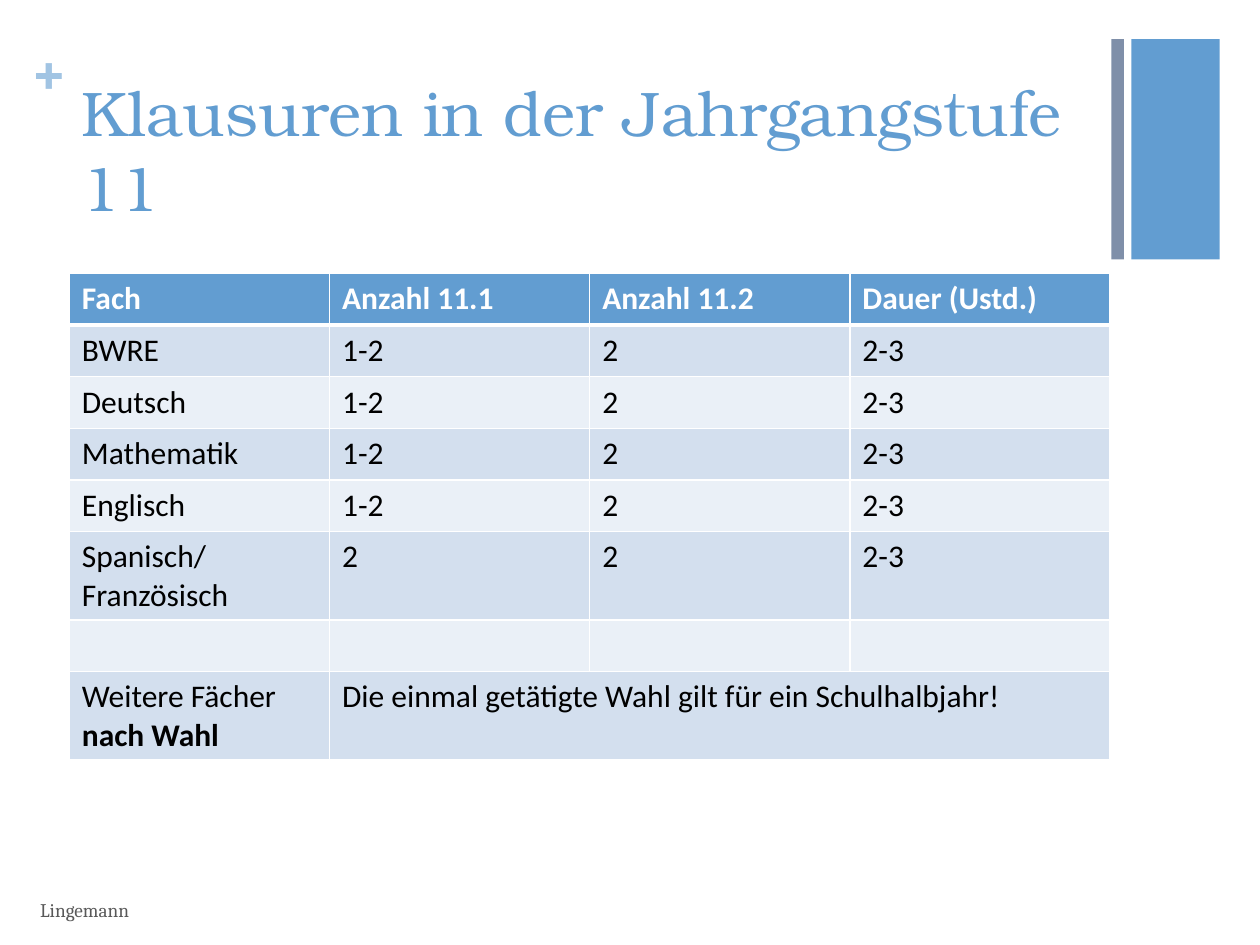
from lxml.etree import SubElement
from pptx import Presentation
from pptx.dml.color import RGBColor
from pptx.enum.shapes import MSO_SHAPE as Shape
from pptx.enum.text import MSO_ANCHOR as Anchor, MSO_AUTO_SIZE as AutoSize, PP_ALIGN as Align
from pptx.oxml.ns import qn
from pptx.util import Inches, Pt

BLUE = RGBColor(0x62, 0x9D, 0xD1)
PALE_BLUE = RGBColor(0xA1, 0xC4, 0xE3)
SLATE = RGBColor(0x7F, 0x8F, 0xA9)
BAND_DARK = RGBColor(0xD3, 0xDF, 0xEE)
BAND_LIGHT = RGBColor(0xEA, 0xF0, 0xF7)
GREY = RGBColor(0x59, 0x59, 0x59)
BLACK = RGBColor(0, 0, 0)
WHITE = RGBColor(0xFF, 0xFF, 0xFF)

LEFT, CONTENT_WIDTH = 0.55, 8.26
TABLE_TOP = 2.17
LINE_ROW, DOUBLE_ROW = 0.41, 0.7
HEADER = ["Fach", "Anzahl 11.1", "Anzahl 11.2", "Dauer (Ustd.)"]
SUBJECTS = [[name, "1-2", "2", "2-3"]
            for name in ("BWRE", "Deutsch", "Mathematik", "Englisch")]
SUBJECTS.append(["Spanisch/\nFranzösisch", "2", "2", "2-3"])
CHOICE_NOTE = "Die einmal getätigte Wahl gilt für ein Schulhalbjahr!"


def add_span(para, text, size, font, color, bold=False):
    span = para.add_run()
    span.text = text
    span.font.size = Pt(size)
    span.font.name = font
    span.font.bold = bold
    span.font.color.rgb = color


def add_bar(page, left, width, color):
    bar = page.shapes.add_shape(Shape.RECTANGLE, Inches(left), Inches(0.31),
                                Inches(width), Inches(1.75))
    bar.shadow.inherit = False
    bar.fill.solid()
    bar.fill.fore_color.rgb = color
    bar.line.fill.background()


def add_label(page, place, text, size, color, bold=False, inset=None, anchor=Anchor.TOP):
    box = page.shapes.add_textbox(*map(Inches, place))
    frame = box.text_frame
    frame.word_wrap = True
    frame.vertical_anchor = anchor
    if inset is not None:
        frame.margin_left = frame.margin_right = Inches(inset)
        frame.margin_top = frame.margin_bottom = Inches(inset)
    add_span(frame.paragraphs[0], text, size, "Cambria", color, bold)


def set_title(page, text):
    title = page.shapes.title
    title.left, title.top = Inches(LEFT), Inches(0.53)
    title.width, title.height = Inches(CONTENT_WIDTH), Inches(1.22)
    frame = title.text_frame
    frame.word_wrap = True
    frame.auto_size = AutoSize.NONE
    frame.vertical_anchor = Anchor.TOP
    para = frame.paragraphs[0]
    para.alignment = Align.LEFT
    add_span(para, text, 36, "TeX Gyre Bonum", BLUE)


def style_cell(cell, fill, top=1, bottom=1):
    """Give the cell white borders (widths in points) and a solid fill."""
    props = cell._tc.get_or_add_tcPr()
    for side, width in (("L", 1), ("R", 1), ("T", top), ("B", bottom)):
        line = SubElement(props, qn(f"a:ln{side}"), w=str(Pt(width)))
        solid = SubElement(line, qn("a:solidFill"))
        SubElement(solid, qn("a:srgbClr"), val=str(WHITE))
    cell.fill.solid()
    cell.fill.fore_color.rgb = fill


def write_cell(cell, text, color=BLACK, bold=False):
    frame = cell.text_frame
    for index, line in enumerate(text.split("\n")):
        para = frame.add_paragraph() if index else frame.paragraphs[0]
        add_span(para, line, 18, "Calibri", color, bold)


def add_exam_table(page):
    heights = [LINE_ROW] * 5 + [DOUBLE_ROW, LINE_ROW, DOUBLE_ROW]
    table = page.shapes.add_table(len(heights), len(HEADER), Inches(LEFT), Inches(TABLE_TOP),
                                  Inches(CONTENT_WIDTH), Inches(sum(heights))).table
    table.first_row = table.horz_banding = False
    for row, height in zip(table.rows, heights):
        row.height = Inches(height)

    for index, row in enumerate(table.rows):
        fill = BLUE if index == 0 else BAND_DARK if index % 2 else BAND_LIGHT
        for cell in row.cells:
            style_cell(cell, fill, top=3 if index == 1 else 1, bottom=3 if index == 0 else 1)

    for col, heading in enumerate(HEADER):
        write_cell(table.cell(0, col), heading, WHITE, bold=True)
    for index, subject in enumerate(SUBJECTS, start=1):
        for col, text in enumerate(subject):
            write_cell(table.cell(index, col), text)

    last = len(heights) - 1
    choice = table.cell(last, 0)
    write_cell(choice, "Weitere Fächer ")
    add_span(choice.text_frame.paragraphs[0], "nach Wahl", 18, "Calibri", BLACK, bold=True)
    note = table.cell(last, 1)
    note.merge(table.cell(last, len(HEADER) - 1))
    write_cell(note, CHOICE_NOTE)


def main():
    deck = Presentation()
    deck.slide_width, deck.slide_height = Inches(10), Inches(7.5)
    page = deck.slides.add_slide(deck.slide_layouts[5])
    add_bar(page, 8.98, 0.7, BLUE)
    add_label(page, (0.24, 0.25, 0.28, 0.61), "+", 36, PALE_BLUE, bold=True, inset=0)
    add_bar(page, 8.82, 0.1, SLATE)
    set_title(page, "Klausuren in der Jahrgangstufe 11")
    add_exam_table(page)
    add_label(page, (0.22, 7.02, 6.7, 0.4), "Lingemann", 11, GREY, anchor=Anchor.MIDDLE)
    deck.save("out.pptx")


if __name__ == "__main__":
    main()
